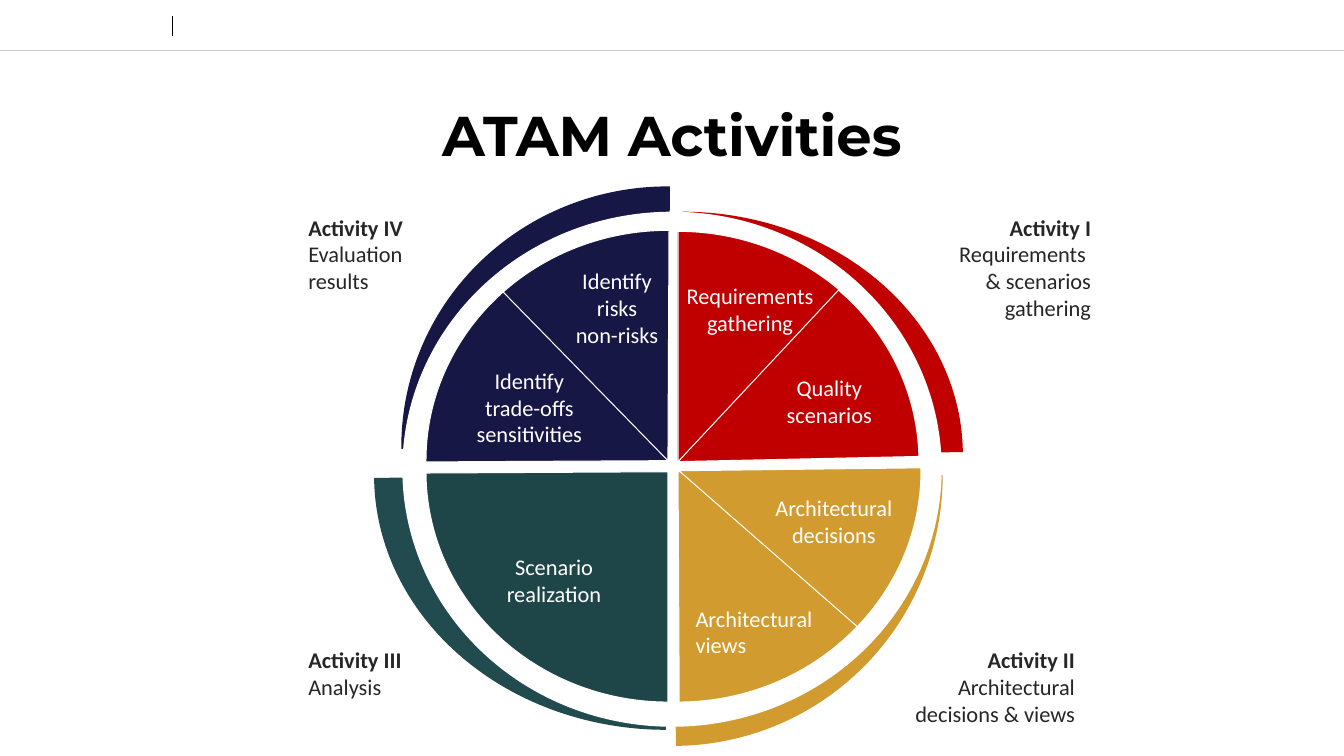
"""Build the ATAM Activities slide with its four-quadrant wheel."""
from lxml import etree
from pptx import Presentation
from pptx.dml.color import RGBColor
from pptx.enum.shapes import MSO_CONNECTOR, MSO_SHAPE
from pptx.enum.text import MSO_ANCHOR, MSO_AUTO_SIZE, PP_ALIGN
from pptx.oxml.ns import qn
from pptx.util import Inches, Pt

PIE, OVAL = MSO_SHAPE.PIE, MSO_SHAPE.OVAL
STRAIGHT = MSO_CONNECTOR.STRAIGHT
LEFT, CENTER, RIGHT = PP_ALIGN.LEFT, PP_ALIGN.CENTER, PP_ALIGN.RIGHT
MIDDLE = MSO_ANCHOR.MIDDLE
GROW = MSO_AUTO_SIZE.SHAPE_TO_FIT_TEXT

NAVY, RED, GOLD, TEAL = "171745", "C00000", "D19B2F", "1E4649"
RING_TEAL, WHITE, BLACK, INK = "224B50", "FFFFFF", "000000", "262626"
SLIDE_SIZE = (13.33, 7.5)
SECTOR_SIZE = (4.57, 4.8)
ADJUSTMENT_PER_DEGREE = 0.6

TITLE = "ATAM Activities"
HEADER_LINES = [
    ((0, 0.5), (13.33, 0.5), "CCCCCC", 0.25),
    ((1.71, 0.16), (1.71, 0.36), BLACK, 0.5),
]
# box, rotation, start and end angle, colour
RING_ARCS = [
    ((4.04, 1.79, 5.16, 5.28), 90, (89.48, 180.55), NAVY),
    ((4.08, 1.82, 5.05, 5.79), 90, (0, 89.49), RING_TEAL),
    ((4.01, 2.03, 5.34, 5.37), 0, (0, 89.49), GOLD),
    ((4.36, 1.73, 4.82, 5.56), 270, (0, 89.49), RED),
]
RING_HOLE = (3.99, 2.1, 5.35, 5.11)
SECTORS = [
    ((4.43, 2.18), (0, 88.77), RED),
    ((4.34, 2.28), (179.99, 269.7), TEAL),
    ((4.44, 2.18), (0, 43.09), RED),
    ((4.34, 2.17), (269.7, 0.27), NAVY),
    ((4.34, 2.17), (269.7, 315.67), NAVY),
    ((4.44, 2.28), (89.5, 179.7), GOLD),
    ((4.45, 2.27), (89.3, 131.17), GOLD),
]
SECTOR_LABELS = [
    ((7.38, 3.66, 1.69, 0.64), ["Quality", "scenarios"], CENTER),
    ((6.56, 2.75, 1.76, 0.64), ["Requirements", "gathering"], CENTER),
    ((4.44, 5.44, 2.11, 0.64), ["Scenario", "realization"], CENTER),
    ((5.49, 2.6, 1.26, 0.91), ["Identify", "risks", "non-risks"], CENTER),
    ((4.62, 3.59, 1.26, 0.91), ["Identify", "trade-offs sensitivities"], CENTER),
    ((6.8, 5.95, 1.48, 0.64), ["Architectural views"], LEFT),
    ((7.53, 4.85, 1.48, 0.64), ["Architectural decisions"], CENTER),
]
ACTIVITIES = [
    ((2.96, 2.07, 1.26, 0.91), ["Activity IV", "Evaluation results"], LEFT),
    ((9.19, 2.07, 1.73, 1.18),
     ["Activity I", "Requirements ", "& scenarios", "gathering"], RIGHT),
    ((8.56, 6.36, 2.2, 0.91),
     ["Activity II", "Architectural decisions & views"], RIGHT),
    ((2.96, 6.36, 2.2, 0.64), ["Activity III", "Analysis"], LEFT),
]


def color(value):
    return RGBColor.from_string(value)


def inches(values):
    return [Inches(value) for value in values]


def write(frame, lines, font="Calibri", size=16, fill=WHITE, align=CENTER,
          bold_lines=0):
    frame.word_wrap = True
    for index, line in enumerate(lines):
        para = frame.paragraphs[0] if index == 0 else frame.add_paragraph()
        para.alignment = align
        span = para.add_run()
        span.text = line
        span.font.name = font
        span.font.size = Pt(size)
        span.font.bold = index < bold_lines
        span.font.color.rgb = color(fill)


def add_label(page, box, lines, **style):
    frame = page.shapes.add_textbox(*inches(box)).text_frame
    write(frame, lines, **style)
    frame.auto_size = GROW


def add_filled(page, kind, box, fill, rotation=0, angles=(), outline=None):
    shape = page.shapes.add_shape(kind, *inches(box))
    shape.shadow.inherit = False
    shape.rotation = rotation
    for index, angle in enumerate(angles):
        shape.adjustments[index] = angle * ADJUSTMENT_PER_DEGREE
    shape.fill.solid()
    shape.fill.fore_color.rgb = color(fill)
    if outline:
        shape.line.color.rgb = color(outline)
        shape.line.width = Pt(0.75)
    else:
        shape.line.fill.background()


def add_rule(page, start, end, stroke, width):
    rule = page.shapes.add_connector(STRAIGHT, *inches(start + end))
    rule.line.color.rgb = color(stroke)
    rule.line.width = Pt(width)
    etree.SubElement(rule._element.spPr, qn("a:effectLst"))


def main():
    deck = Presentation()
    deck.slide_width, deck.slide_height = inches(SLIDE_SIZE)
    page = deck.slides.add_slide(deck.slide_layouts[5])

    title = page.shapes.title
    title.left, title.top, title.width, title.height = inches((0, 0.92, 13.33, 0.83))
    title.text_frame.vertical_anchor = MIDDLE
    write(title.text_frame, [TITLE], font="Montserrat", size=40, fill=BLACK,
          bold_lines=1)

    for start, end, stroke, width in HEADER_LINES:
        add_rule(page, start, end, stroke, width)
    for box, rotation, angles, fill in RING_ARCS:
        add_filled(page, PIE, box, fill, rotation, angles)
    add_filled(page, OVAL, RING_HOLE, WHITE)
    for corner, angles, fill in SECTORS:
        add_filled(page, PIE, corner + SECTOR_SIZE, fill, 270, angles, WHITE)
    for box, lines, align in SECTOR_LABELS:
        add_label(page, box, lines, align=align)
    for box, lines, align in ACTIVITIES:
        add_label(page, box, lines, align=align, fill=INK, bold_lines=1)

    deck.save("out.pptx")


if __name__ == "__main__":
    main()
